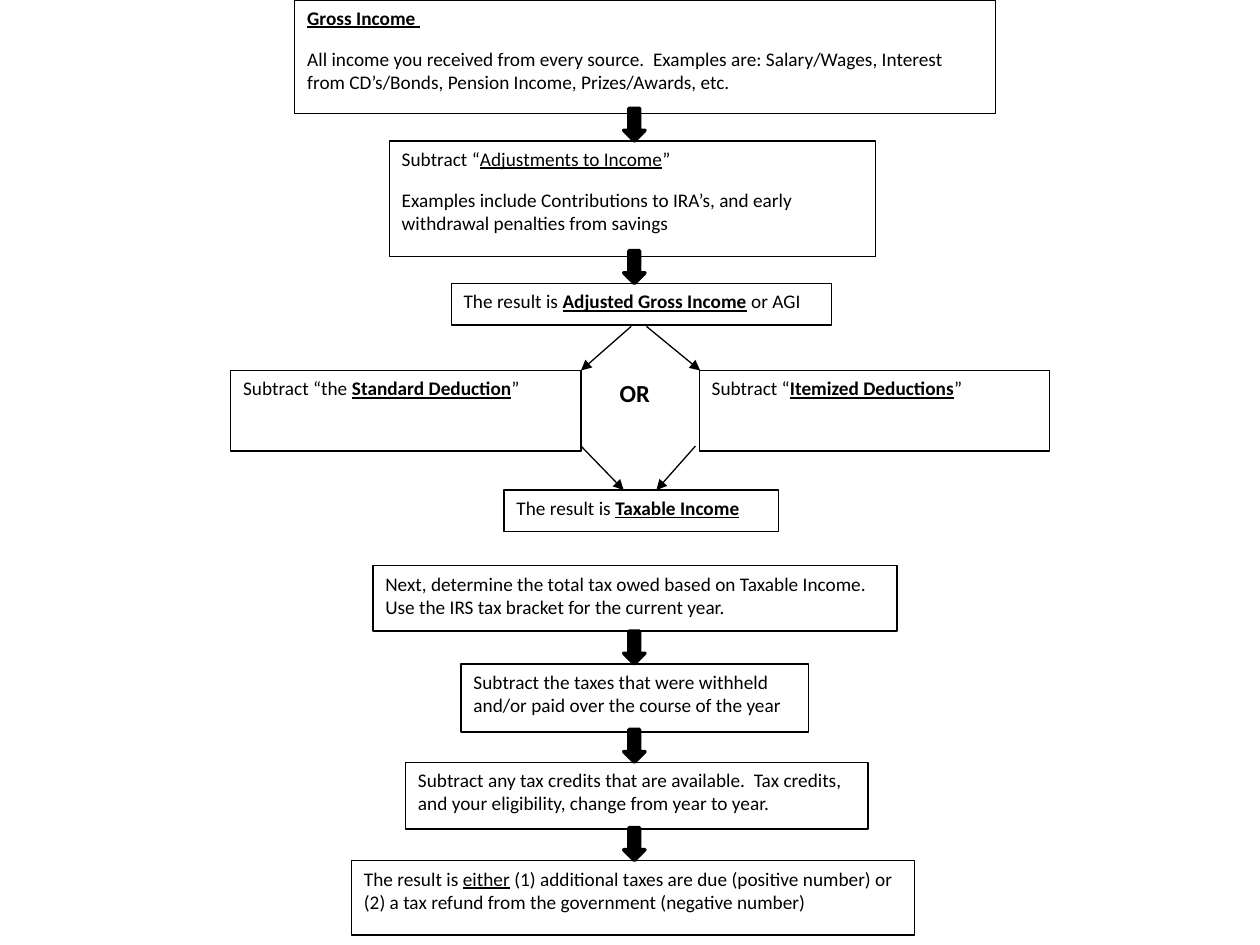
from typing import NamedTuple

from lxml import etree
from pptx import Presentation
from pptx.dml.color import RGBColor
from pptx.enum.shapes import MSO_CONNECTOR, MSO_SHAPE
from pptx.enum.text import MSO_ANCHOR, PP_ALIGN
from pptx.oxml.ns import qn
from pptx.util import Pt

RECT = MSO_SHAPE.RECTANGLE
DOWN = MSO_SHAPE.DOWN_ARROW
LINE = MSO_CONNECTOR.STRAIGHT
LEFT = PP_ALIGN.LEFT
TOP = MSO_ANCHOR.TOP
BLACK, WHITE = "000000", "FFFFFF"


class Run(NamedTuple):
    text: str
    bold: bool = False
    under: bool = False


class Box(NamedTuple):
    x: float
    y: float
    w: float
    h: float
    paras: list[list[Run]]
    size: float = 11
    edge: bool = True


class Link(NamedTuple):
    x1: float
    y1: float
    x2: float
    y2: float


def key(text: str) -> Run:
    """Return a bold, underlined term."""
    return Run(text, True, True)


BOXES = [
    Box(168.5, 0, 400.3, 64.8, [
        [key("Gross Income ")],
        [Run("All income you received from every source.  Examples are: "
             "Salary/Wages, Interest from CD’s/Bonds, Pension Income, "
             "Prizes/Awards, etc.")]]),
    Box(222.5, 80.6, 277.9, 66.2, [
        [Run("Subtract “"), Run("Adjustments to Income", under=True), Run("”")],
        [Run("Examples include Contributions to IRA’s, and early "
             "withdrawal penalties from savings")]]),
    Box(257.8, 162, 217.4, 23.8, [
        [Run("The result is "), key("Adjusted Gross Income"), Run(" or AGI")]]),
    Box(131.8, 211.7, 200.2, 46.1, [
        [Run("Subtract “the "), key("Standard Deduction"), Run("”")]]),
    Box(399.6, 211.7, 200.2, 46.1, [
        [Run("Subtract “"), key("Itemized Deductions"), Run("”")]]),
    Box(347, 212.4, 34.6, 29.5, [[Run("OR", True)]], 14, False),
    Box(288, 280.1, 157, 23.8, [
        [Run("The result is "), key("Taxable Income")]]),
    Box(213.1, 323.3, 299.5, 37.4, [
        [Run("Next, determine the total tax owed based on Taxable Income. "
             "Use the IRS tax bracket for the current year.")]]),
    Box(263.5, 379.4, 198.7, 38.9, [
        [Run("Subtract the taxes that were withheld and/or paid over the "
             "course of the year")]]),
    Box(231.8, 435.6, 264.2, 38.2, [
        [Run("Subtract any tax credits that are available.  Tax credits, "
             "and your eligibility, change from year to year.")]]),
    Box(200.9, 491.8, 321.8, 42.5, [
        [Run("The result is "), Run("either", under=True),
         Run(" (1) additional taxes are due (positive number) or (2) a tax "
             "refund from the government (negative number)")]]),
]
LINKS = [
    Link(360.7, 186.5, 332, 211.7),
    Link(369.4, 186.5, 400.1, 211.7),
    Link(397.4, 254.9, 375.1, 280.1),
    Link(332, 254.9, 356.4, 280.1),
]
STEPS = [61.9, 143.3, 360.7, 416.9, 473]


def tint(hue: str) -> RGBColor:
    return RGBColor.from_string(hue)


def add_shape(slide, kind, x: float, y: float, w: float, h: float, fill: str):
    shape = slide.shapes.add_shape(kind, Pt(x), Pt(y), Pt(w), Pt(h))
    shape.shadow.inherit = False
    shape.fill.solid()
    shape.fill.fore_color.rgb = tint(fill)
    return shape


def set_line(shape, width: float) -> None:
    shape.line.color.rgb = tint(BLACK)
    shape.line.width = Pt(width)


def draw_box(slide, box: Box) -> None:
    shape = add_shape(slide, RECT, box.x, box.y, box.w, box.h, WHITE)
    if box.edge:
        set_line(shape, 0.75)
    else:
        shape.line.fill.background()
    frame = shape.text_frame
    frame.word_wrap = True
    frame.vertical_anchor = TOP
    for i, runs in enumerate(box.paras):
        para = frame.add_paragraph() if i else frame.paragraphs[0]
        para.alignment = LEFT
        para.space_after = Pt(10)
        para.font.name = "Calibri"
        para.font.size = Pt(box.size)
        para.font.color.rgb = tint(BLACK)
        for part in runs:
            run = para.add_run()
            run.text = part.text
            run.font.bold = part.bold
            run.font.underline = part.under


def draw_link(slide, link: Link) -> None:
    line = slide.shapes.add_connector(LINE, *map(Pt, link))
    set_line(line, 0.75)
    etree.SubElement(line.line._get_or_add_ln(), qn("a:tailEnd"), type="triangle")
    etree.SubElement(line._element.spPr, qn("a:effectLst"))


def draw_step(slide, y: float) -> None:
    """Draw a block arrow that leads down to the next box."""
    set_line(add_shape(slide, DOWN, 356.4, y, 12.2, 18.7, BLACK), 2)


def main() -> None:
    deck = Presentation()
    deck.slide_width, deck.slide_height = Pt(720), Pt(540)
    slide = deck.slides.add_slide(deck.slide_layouts[6])
    for box in BOXES:
        draw_box(slide, box)
    for link in LINKS:
        draw_link(slide, link)
    for y in STEPS:
        draw_step(slide, y)
    deck.save("out.pptx")


if __name__ == "__main__":
    main()
